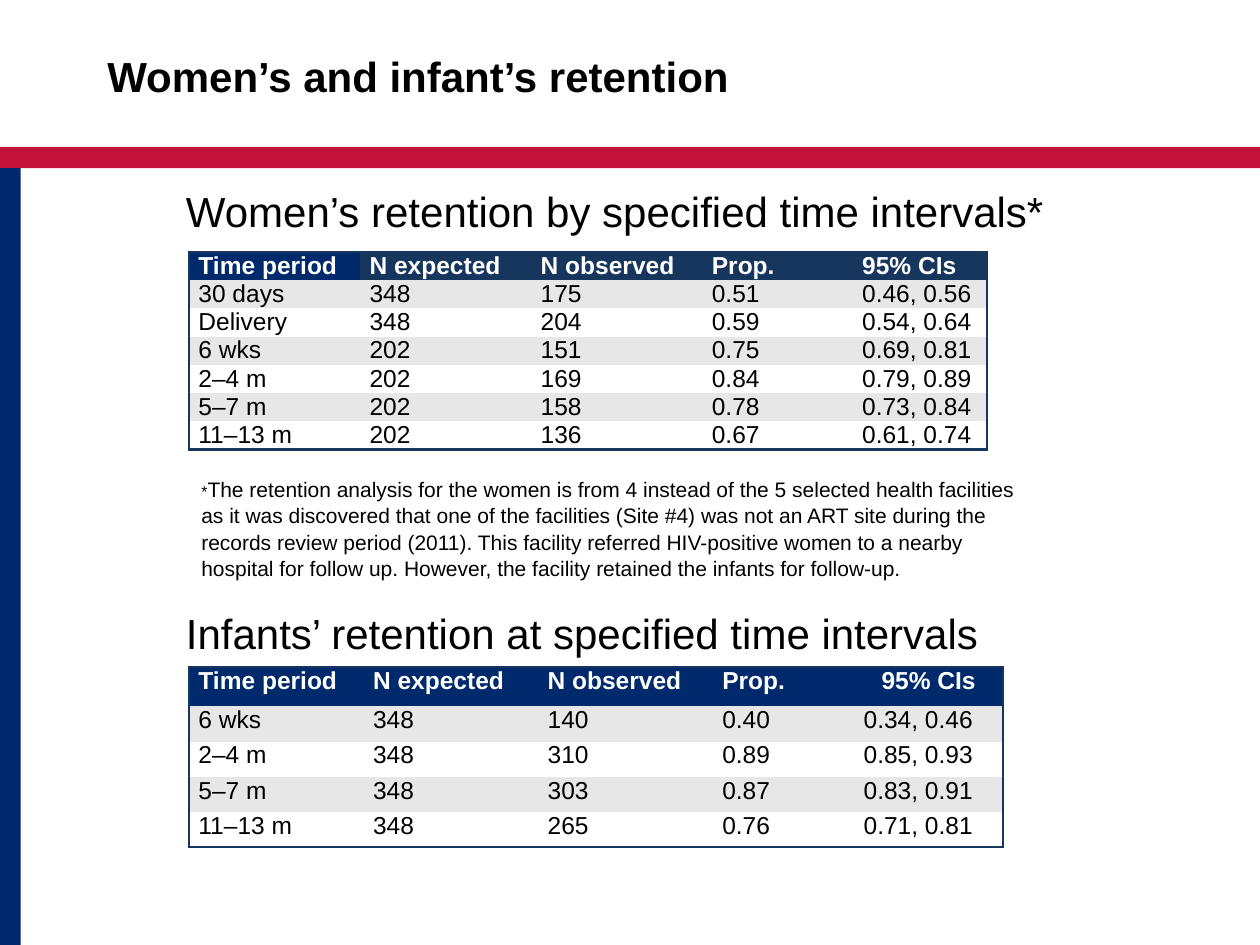
import pptx
import pptx.util
import pptx.dml.color
import pptx.enum.shapes
import pptx.enum.text
import pptx.oxml
import lxml.etree

Cm, Pt = pptx.util.Cm, pptx.util.Pt
ALIGN, ANCHOR = pptx.enum.text.PP_ALIGN, pptx.enum.text.MSO_ANCHOR
RED, NAVY, SLATE, GREY, WHITE, BLACK = (
    "C2113A", "002A6C", "17365D", "E7E7E7", "FFFFFF", "000000")
NO_STYLE = "{2D5ABB26-0587-4C30-8999-92F81FD0307C}"

# Content
TITLE = "Women’s and infant’s retention"
BANDS = [(0, 2.96, 25.4, 0.43, RED), (0, 3.39, 0.42, 15.66, NAVY)]
HEADER = ["Time period", "N expected", "N observed", "Prop.", "95% CIs"]
TABLES = [
    dict(
        top=5.08, widths=[3.45, 3.45, 3.45, 3.03, 2.7],
        header_height=0.57, row_height=0.57,
        header_fills=[NAVY] + [SLATE] * 4, last_header_align=ALIGN.LEFT,
        rows=[
            ["30 days", "348", "175", "0.51", "0.46, 0.56"],
            ["Delivery", "348", "204", "0.59", "0.54, 0.64"],
            ["6 wks", "202", "151", "0.75", "0.69, 0.81"],
            ["2–4 m", "202", "169", "0.84", "0.79, 0.89"],
            ["5–7 m", "202", "158", "0.78", "0.73, 0.84"],
            ["11–13 m", "202", "136", "0.67", "0.61, 0.74"],
        ]),
    dict(
        top=13.45, widths=[3.52, 3.52, 3.52, 2.85, 3.0],
        header_height=0.79, row_height=0.71,
        header_fills=[NAVY] * 5, last_header_align=ALIGN.CENTER,
        rows=[
            ["6 wks", "348", "140", "0.40", "0.34, 0.46"],
            ["2–4 m", "348", "310", "0.89", "0.85, 0.93"],
            ["5–7 m", "348", "303", "0.87", "0.83, 0.91"],
            ["11–13 m", "348", "265", "0.76", "0.71, 0.81"],
        ]),
]
# Each text: left, top, width, height, then (words, size) runs
TEXTS = [
    (3.5, 3.56, 21.16, 1.27,
     [("Women’s retention by specified time intervals*", 24)]),
    (3.5, 12.07, 17.35, 1.27,
     [("Infants’ retention at specified time intervals", 24)]),
    (3.81, 9.45, 17.15, 2.31, [
        ("*", 9),
        ("The retention analysis for the women is from 4 instead of the 5 "
         "selected health facilities as it was discovered that one of the "
         "facilities (Site #4) was not an ART site during the records review "
         "period (2011). This facility referred HIV-positive women to a nearby "
         "hospital for follow up. However, the facility retained the infants "
         "for follow-up.", 12)]),
]


def rgb(value):
    return pptx.dml.color.RGBColor.from_string(value)


def apply(target, **values):
    for name, value in values.items():
        setattr(target, name, value)


def add_run(paragraph, words, size, color=BLACK, bold=False):
    run = paragraph.add_run()
    run.text = words
    apply(run.font, name="Arial", size=Pt(size), bold=bold)
    run.font.color.rgb = rgb(color)


def fill(target, color):
    target.fill.solid()
    target.fill.fore_color.rgb = rgb(color)


def write(frame, runs, bold=False):
    apply(frame, word_wrap=True, vertical_anchor=ANCHOR.TOP,
          auto_size=pptx.enum.text.MSO_AUTO_SIZE.NONE)
    paragraph = frame.paragraphs[0]
    apply(paragraph, alignment=ALIGN.LEFT, line_spacing=1.05)
    for words, size in runs:
        add_run(paragraph, words, size, bold=bold)


def outline(cell, sides):
    properties = cell._tc.get_or_add_tcPr()
    for index, side in enumerate(sides):
        line = pptx.oxml.parse_xml(
            '<a:ln%s xmlns:a="http://schemas.openxmlformats.org/drawingml/2006/main"'
            ' w="%d"><a:solidFill><a:srgbClr val="%s"/></a:solidFill></a:ln%s>'
            % (side, Pt(1.5), SLATE, side))
        properties.insert(index, line)


def add_retention_table(slide, top, widths, header_height, row_height,
                        header_fills, last_header_align, rows):
    lines = [HEADER] + rows
    heights = [header_height] + [row_height] * len(rows)
    frame = slide.shapes.add_table(len(lines), len(widths), Cm(3.81), Cm(top),
                                   Cm(sum(widths)), Cm(sum(heights)))
    table = frame.table
    table._tbl.tblPr[0].text = NO_STYLE
    for column, width in zip(table.columns, widths):
        column.width = Cm(width)
    last_row, last_column = len(lines) - 1, len(widths) - 1
    for r, (line, height) in enumerate(zip(lines, heights)):
        table.rows[r].height = Cm(height)
        for c, words in enumerate(line):
            cell = table.cell(r, c)
            apply(cell, margin_left=Cm(0.19), margin_right=Cm(0.19),
                  margin_top=0, margin_bottom=0, vertical_anchor=ANCHOR.TOP)
            fill(cell, header_fills[c] if r == 0 else GREY if r % 2 else WHITE)
            paragraph = cell.text_frame.paragraphs[0]
            add_run(paragraph, words, 14, BLACK if r else WHITE, r == 0)
            if r == 0 and c == last_column:
                paragraph.alignment = last_header_align
            edges = {"L": c == 0, "R": c == last_column,
                     "T": r == 0, "B": r == last_row}
            outline(cell, [side for side, on_edge in edges.items() if on_edge])


def main():
    deck = pptx.Presentation()
    apply(deck, slide_width=Cm(25.4), slide_height=Cm(19.05))
    slide = deck.slides.add_slide(deck.slide_layouts[5])

    # Title
    title = slide.shapes.title
    apply(title, left=Cm(1.91), top=Cm(0.85), width=Cm(21.59), height=Cm(1.69))
    write(title.text_frame, [(TITLE, 24)], bold=True)

    # Colour bands
    for *box, color in BANDS:
        band = slide.shapes.add_shape(
            pptx.enum.shapes.MSO_SHAPE.RECTANGLE, *map(Cm, box))
        band.shadow.inherit = False
        fill(band, color)
        band.line.fill.background()

    # Tables, headings and footnote
    for retention in TABLES:
        add_retention_table(slide, **retention)
    for *box, runs in TEXTS:
        write(slide.shapes.add_textbox(*map(Cm, box)).text_frame, runs)

    deck.save("out.pptx")


if __name__ == "__main__":
    main()
